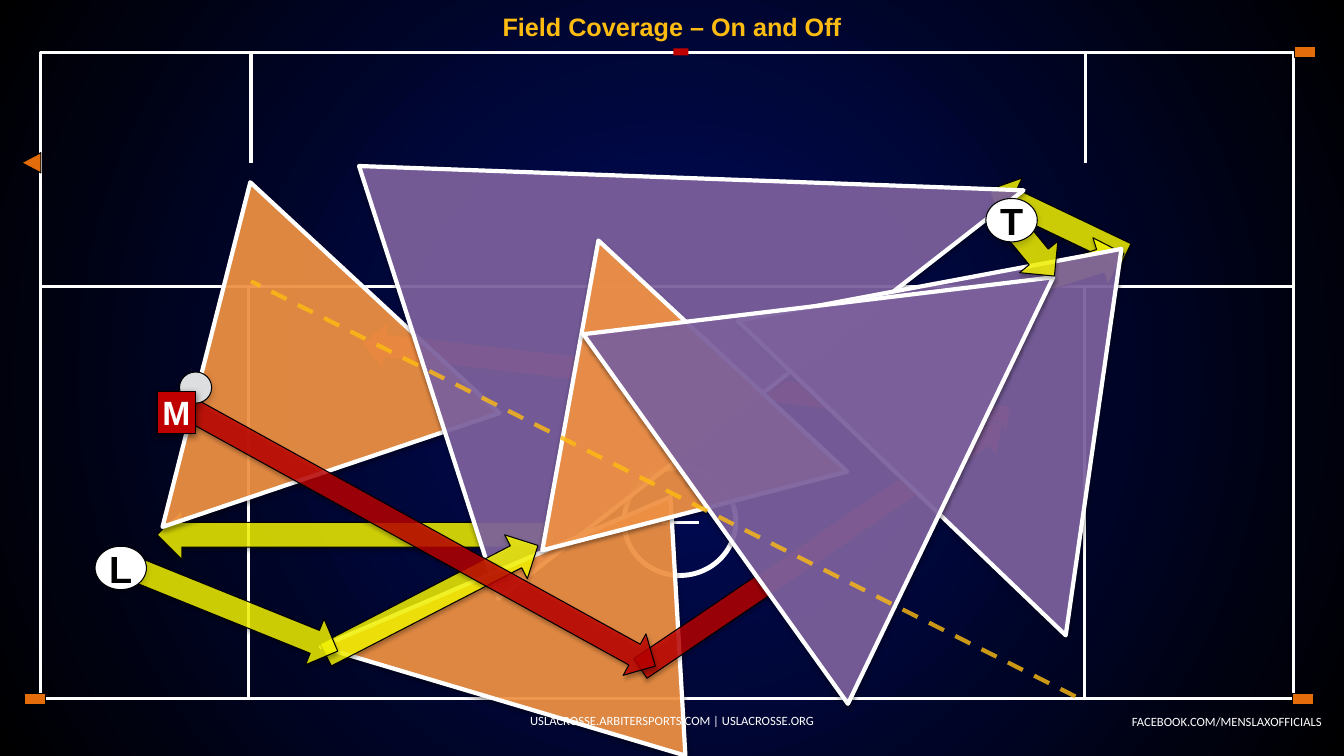
from lxml import etree
from pptx import Presentation
from pptx.dml.color import RGBColor
from pptx.enum.dml import MSO_LINE
from pptx.enum.shapes import MSO_CONNECTOR, MSO_SHAPE
from pptx.enum.text import MSO_ANCHOR, PP_ALIGN
from pptx.oxml import parse_xml
from pptx.oxml.ns import nsdecls, qn
from pptx.util import Pt

RECT, OVAL = MSO_SHAPE.RECTANGLE, MSO_SHAPE.OVAL
TRIANGLE, ARROW = MSO_SHAPE.ISOSCELES_TRIANGLE, MSO_SHAPE.RIGHT_ARROW
LEFT_TO_RIGHT = MSO_CONNECTOR.STRAIGHT
CENTER, RIGHT = PP_ALIGN.CENTER, PP_ALIGN.RIGHT
MIDDLE, DASH = MSO_ANCHOR.MIDDLE, MSO_LINE.DASH

COLORS = {
    "navy": "000B5F", "black": "000000", "white": "FFFFFF", "gold": "FEBC11",
    "red": "C00000", "cone": "E46C0A", "yellow": "FFFF00", "orange": "F79646",
    "purple": "8064A2", "ball": "DCDEE0",
}
ARROW_HEIGHT = {"yellow": 35.3, "red": 33.8}
# Coverage parts from back to front: colour, left, top, width, rotation,
# and a height for the triangles
COVERAGE = [
    ("yellow", 112.3, 364.3, 283, 180),
    ("yellow", 701.3, 141.1, 108, 205.5),
    ("red", 257, 254.9, 465.1, 186.6),
    ("orange", 70.6, 182.9, 242.6, 222.8, 223.2),
    ("purple", 356.4, -18.7, 324.7, 72.1, 446.4),
    ("orange", 264.2, 326.9, 185, 266.7, 255.6),
    ("red", 430.6, 373, 312.5, 325.9),
    ("yellow", 223.2, 411.1, 170.6, 332.7),
    ("yellow", 743.8, 172.8, 60.5, 342.4),
    ("orange", 330.5, 229, 242.6, 222.9, 189.4),
    ("purple", 560.2, 146.2, 324.7, 43.8, 226.8),
    ("purple", 469.4, 136.1, 324.7, 54.4, 296.6),
    ("yellow", 711.4, 159.8, 51.1, 50.6),
    ("red", 112.3, 367.2, 379.4, 28.9),
    ("yellow", 91.4, 418.3, 155.5, 22),
]


def rgb(name):
    return RGBColor.from_string(COLORS[name])


def set_alpha(fill, percent):
    clr = fill._xPr.find(qn("a:solidFill"))[0]
    etree.SubElement(clr, qn("a:alpha"), val=str(percent * 1000))


def add_shadow(sp, alpha, blur, dist):
    effects = sp._element.spPr.find(qn("a:effectLst"))
    effects.append(parse_xml(
        f'<a:outerShdw {nsdecls("a")} blurRad="{Pt(blur)}" dist="{Pt(dist)}" '
        f'dir="5400000" rotWithShape="0"><a:srgbClr val="{COLORS["black"]}">'
        f'<a:alpha val="{alpha * 1000}"/></a:srgbClr></a:outerShdw>'))


def add_part(slide, kind, box, fill=None, line=None, weight=0.75, rotation=0):
    sp = slide.shapes.add_shape(kind, *map(Pt, box))
    sp.shadow.inherit = False
    sp.rotation = rotation
    if fill:
        sp.fill.solid()
        sp.fill.fore_color.rgb = rgb(fill)
    else:
        sp.fill.background()
    if line:
        sp.line.color.rgb = rgb(line)
        sp.line.width = Pt(weight)
    else:
        sp.line.fill.background()
    return sp


def add_line(slide, ends, color, weight):
    cxn = slide.shapes.add_connector(LEFT_TO_RIGHT, *map(Pt, ends))
    cxn.line.color.rgb = rgb(color)
    cxn.line.width = Pt(weight)
    etree.SubElement(cxn._element.spPr, qn("a:effectLst"))
    return cxn


def write(sp, text, size, color, font="Arial", bold=False, align=CENTER,
          wrap=True, inset=None):
    tf = sp.text_frame
    tf.text = text
    tf.word_wrap = wrap
    tf.vertical_anchor = MIDDLE
    if inset is not None:
        tf.margin_left = tf.margin_right = Pt(inset)
        tf.margin_top = tf.margin_bottom = Pt(inset)
    p = tf.paragraphs[0]
    p.alignment = align
    r = p.runs[0]
    r.font.name, r.font.size, r.font.bold = font, Pt(size), bold
    r.font.color.rgb = rgb(color)


def set_background(slide):
    fill = slide.background.fill
    fill.solid()
    bg = fill._xPr
    bg.replace(bg.find(qn("a:solidFill")), parse_xml(
        f'<a:gradFill {nsdecls("a")} rotWithShape="1"><a:gsLst>'
        f'<a:gs pos="0"><a:srgbClr val="{COLORS["navy"]}"/></a:gs>'
        f'<a:gs pos="100000"><a:srgbClr val="{COLORS["black"]}"/></a:gs>'
        '</a:gsLst><a:path path="circle">'
        '<a:fillToRect l="50000" t="50000" r="50000" b="50000"/>'
        '</a:path></a:gradFill>'))


def draw_field(slide, x, y, w, h):
    upper, end_zone = 167.4, 149
    lower = h - upper
    # Lower half: two end zones around the middle, then the goal circle
    for left, width in ((w - end_zone, end_zone),
                        (end_zone, w - 2 * end_zone), (0, end_zone)):
        add_part(slide, RECT, (x + left, y + upper, width, lower),
                 line="white", weight=2.25)
    add_part(slide, OVAL, (x + 416.9, y + 296.7, 79.9, 77),
             line="white", weight=3.5)
    add_line(slide, (x + 444.2, y + 335.6, x + 470.2, y + 335.6), "white", 2.25)
    # Upper half with its short restraining lines
    add_part(slide, RECT, (x, y, w, upper), line="white", weight=2.25)
    for line_x in (x + 150.5, x + w - 148.4):
        add_line(slide, (line_x, y + 79.2, line_x, y), "white", 2.25)
    # Centre mark, corner cones and side marker
    add_part(slide, RECT, (x + 452.2, y - 2.8, 10.8, 5), "red")
    for cone_x, cone_y in ((w + 0.7, -4.3), (w - 0.8, h - 3.7),
                           (-11.5, h - 3.7)):
        add_part(slide, RECT, (x + cone_x, y + cone_y, 15.1, 7.9),
                 "cone", "black")
    add_part(slide, TRIANGLE, (x - 13.7, y + 72, 14.4, 13.7),
             "cone", "black", rotation=270)


def draw_coverage(slide, x, y):
    for color, left, top, width, rotation, *height in COVERAGE:
        if height:
            sp = add_part(slide, TRIANGLE, (x + left, y + top, width, height[0]),
                          color, "white", 3, rotation)
            set_alpha(sp.fill, 90)
            add_shadow(sp, 38, 3.1, 1.6)
        else:
            sp = add_part(slide, ARROW,
                          (x + left, y + top, width, ARROW_HEIGHT[color]),
                          color, "black", rotation=rotation)
            set_alpha(sp.fill, 80)
            add_shadow(sp, 35, 3.1, 1.8)


def draw_labels(slide, x, y, w):
    for text, box, style in (
            ("FACEBOOK.COM/MENSLAXOFFICIALS", (x + 798.5, y + 506.2, 152.6, 18),
             dict(size=9, color="white", font="Calibri", align=RIGHT, wrap=False)),
            ("USLACROSSE.ARBITERSPORTS.COM | USLACROSSE.ORG",
             (x + (w - 304) / 2, y + 500.4, 304, 28.8),
             dict(size=9, color="white", font="Calibri")),
            ("Field Coverage – On and Off", (x, y + 3.6, w, 30.2),
             dict(size=18, color="gold", bold=True))):
        write(slide.shapes.add_textbox(*map(Pt, box)), text, **style)


def draw_officials(slide, x, y):
    # Lead and trail officials
    for name, left, top in (("L", 67.9, 390.2), ("T", 704.2, 141.8)):
        sp = add_part(slide, OVAL, (x + left, y + top, 36.7, 31),
                      "white", "black")
        add_shadow(sp, 20, 5, 2)
        write(sp, name, 27, "black", bold=True, wrap=False, inset=5)
    # Diagonal line of sight
    sight = add_line(slide, (x + 768.2, y + 497.5, x + 179.3, y + 200.9),
                     "gold", 3)
    sight.line.dash_style = DASH
    set_alpha(sight.line.fill, 80)
    # Ball and its carrier
    ball = add_part(slide, OVAL, (x + 128.2, y + 265.7, 23, 22.3),
                    "ball", "black")
    add_shadow(ball, 20, 5, 2)
    carrier = add_part(slide, RECT, (x + 112.3, y + 279.4, 27.4, 30.2),
                       "red", "black")
    add_shadow(carrier, 50, 5, 2)
    write(carrier, "M", 24, "white", bold=True, wrap=False, inset=4.3)


def main():
    prs = Presentation()
    prs.slide_width, prs.slide_height = Pt(960), Pt(540)
    slide = prs.slides.add_slide(prs.slide_layouts[6])
    set_background(slide)
    draw_field(slide, 28.8, 37.4, 895, 461.6)
    draw_coverage(slide, 0, 0)
    draw_labels(slide, 0, 0, 960)
    draw_officials(slide, 0, 0)
    prs.save("out.pptx")


if __name__ == "__main__":
    main()
